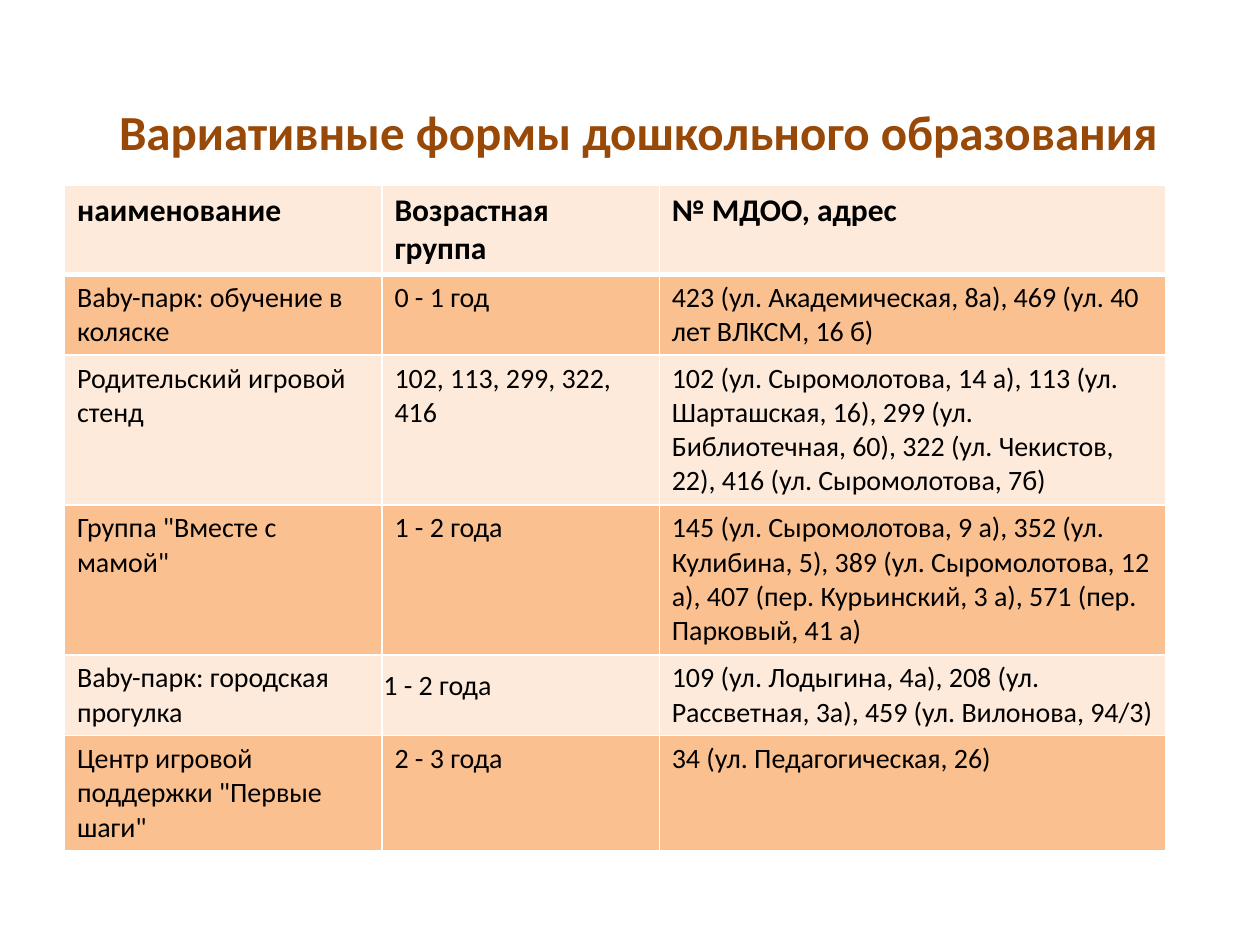
from lxml import etree
from pptx import Presentation
from pptx.dml.color import RGBColor
from pptx.enum import text
from pptx.oxml import ns
from pptx.util import Cm, Pt

TITLE = "Вариативные формы дошкольного образования"
ROWS = [
    ("наименование", "Возрастная группа", "№ МДОО, адрес"),
    ("Baby-парк: обучение в коляске", "0 - 1 год",
     "423 (ул. Академическая, 8а), 469 (ул. 40 лет ВЛКСМ, 16 б)"),
    ("Родительский игровой стенд", "102, 113, 299, 322, 416",
     "102 (ул. Сыромолотова, 14 а), 113 (ул. Шарташская, 16), 299 (ул. "
     "Библиотечная, 60), 322 (ул. Чекистов, 22), 416 (ул. Сыромолотова, 7б)"),
    ('Группа "Вместе с мамой"', "1 - 2 года",
     "145 (ул. Сыромолотова, 9 а), 352 (ул. Кулибина, 5), 389 (ул. Сыромолотова, "
     "12 а), 407 (пер. Курьинский, 3 а), 571 (пер. Парковый, 41 а)"),
    ("Baby-парк: городская прогулка", "1 - 2 года",
     "109 (ул. Лодыгина, 4а), 208 (ул. Рассветная, 3а), 459 (ул. Вилонова, 94/3)"),
    ('Центр игровой поддержки "Первые шаги"', "2 - 3 года",
     "34 (ул. Педагогическая, 26)"),
]
COLUMN_WIDTHS = (6.4, 5.59, 10.21)
ROW_HEIGHTS = (1.8, 1.63, 3.02, 3.02, 1.63, 2.31)
BANDS = ("FDEADA", "FAC090")


def color(value):
    return RGBColor.from_string(value)


def apply(target, formats):
    for name, value in formats.items():
        setattr(target, name, value)


def write(paragraph, words, size, bold, shade):
    run = paragraph.add_run()
    run.text = words
    apply(run.font, {"name": "Calibri", "size": Pt(size), "bold": bold})
    run.font.color.rgb = color(shade)


def draw_borders(cell, widths):
    properties = cell._tc.get_or_add_tcPr()
    for position, (side, width) in enumerate(widths.items()):
        line = etree.Element(ns.qn(f"a:ln{side}"), w=str(Pt(width)))
        fill = etree.SubElement(line, ns.qn("a:solidFill"))
        etree.SubElement(fill, ns.qn("a:srgbClr"), val="FFFFFF")
        properties.insert(position, line)


def add_title(slide, left, top, width, height):
    heading = slide.shapes.add_textbox(Cm(left), Cm(top), Cm(width), Cm(height)).text_frame
    apply(heading, {"word_wrap": True, "vertical_anchor": text.MSO_ANCHOR.MIDDLE,
                    "margin_bottom": Cm(0.5)})
    heading.paragraphs[0].alignment = text.PP_ALIGN.CENTER
    write(heading.paragraphs[0], TITLE, 28, True, "984807")


def add_forms_table(slide, left, top):
    forms = slide.shapes.add_table(
        len(ROWS), len(COLUMN_WIDTHS), Cm(left), Cm(top),
        Cm(sum(COLUMN_WIDTHS)), Cm(sum(ROW_HEIGHTS))).table
    for column, width in zip(forms.columns, COLUMN_WIDTHS):
        column.width = Cm(width)
    for index, (row, height) in enumerate(zip(forms.rows, ROW_HEIGHTS)):
        row.height = Cm(height)
        header = index == 0
        for cell, words in zip(row.cells, ROWS[index]):
            cell.fill.solid()
            cell.fill.fore_color.rgb = color(BANDS[index % 2])
            draw_borders(cell, {"L": 1, "R": 1, "T": 3 if index == 1 else 1,
                                "B": 3 if header else 1})
            write(cell.text_frame.paragraphs[0], words, 18 if header else 16,
                  header, "000000")
    apply(forms.cell(4, 1), {"vertical_anchor": text.MSO_ANCHOR.BOTTOM,
                             "margin_left": Cm(0.03), "margin_right": Cm(0.03),
                             "margin_top": Cm(0.03), "margin_bottom": Cm(0.66)})


def main():
    deck = Presentation()
    apply(deck, {"slide_width": Cm(25.4), "slide_height": Cm(19.05)})
    slide = deck.slides.add_slide(deck.slide_layouts[6])
    add_title(slide, 1.7, 1.93, 22.33, 1.8)
    add_forms_table(slide, 1.3, 3.73)
    deck.save("out.pptx")


if __name__ == "__main__":
    main()
